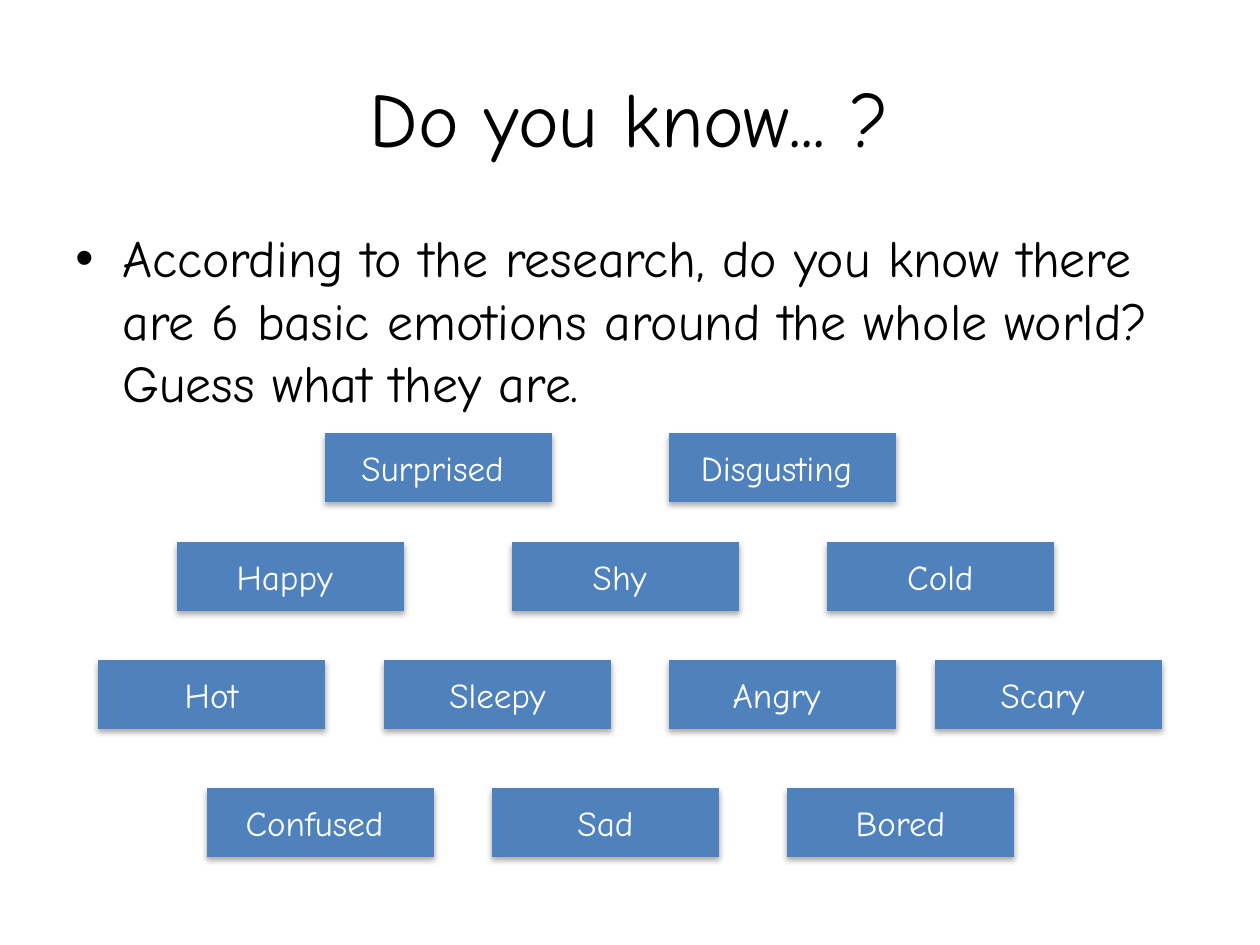
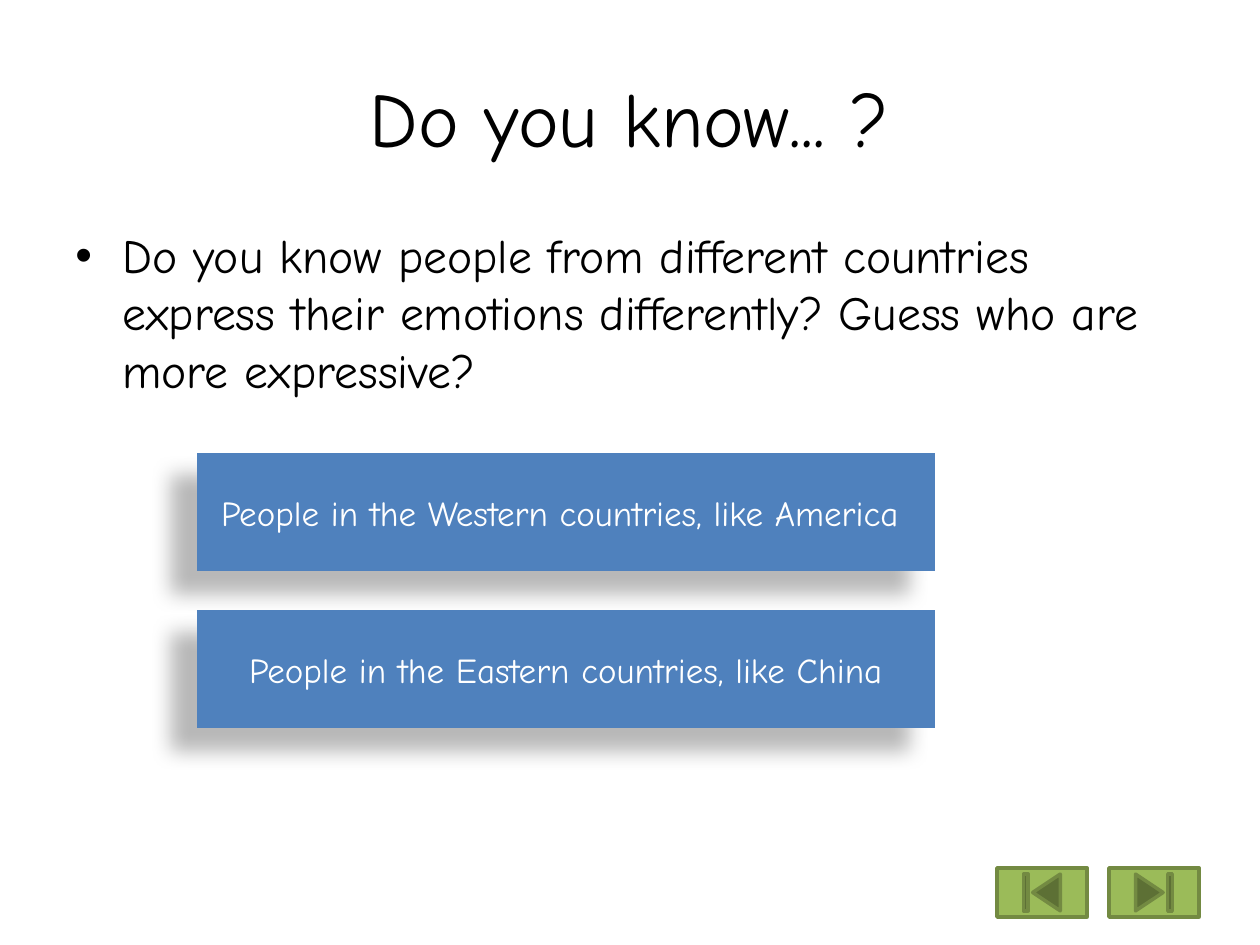
from pptx import Presentation
from pptx import util as u
from pptx.dml.color import RGBColor
from pptx.enum import shapes, text
from pptx.oxml.ns import qn
from lxml import etree

PX_PER_INCH = 126
FONT = "Comic Neue"
COLORS = {
    "ink": "000000",
    "white": "FFFFFF",
    "button": "4F81BD",
    "nav": "9BBB59",
    "nav_line": "738A42",
}
TITLE = "Do you know... ?"
BULLET_INDENT = 47
SOFT_SHADOW = dict(alpha=32, blur=3.5, dist=2.2, angle=90)
LONG_SHADOW = dict(alpha=28, blur=11.8, dist=19.7, angle=141)
EMOTION_SIZE = (227, 69)
EMOTION_ROWS = [
    (433, [(325, "Surprised "), (669, "Disgusting ")]),
    (542, [(177, "Happy "), (512, "Shy "), (827, "Cold")]),
    (660, [(98, "Hot"), (384, "Sleepy"), (669, "Angry "), (935, "Scary ")]),
    (788, [(207, "Confused "), (492, "Sad"), (787, "Bored")]),
]
ANSWERS = [
    "People in the Western countries, like America ",
    "People in the Eastern countries, like China",
]


def px(value):
    return u.Emu(round(value * 914400 / PX_PER_INCH))


def rgb(name):
    return RGBColor.from_string(COLORS[name])


def write(sp, content, size=20, color="white", align="CENTER", anchor="MIDDLE"):
    tf = sp.text_frame
    tf.word_wrap = True
    tf.vertical_anchor = text.MSO_ANCHOR[anchor]
    p = tf.paragraphs[0]
    p.alignment = text.PP_ALIGN[align]
    r = p.add_run()
    r.text = content
    r.font.name = FONT
    r.font.size = u.Pt(size)
    r.font.color.rgb = rgb(color)
    return p


def add_text(s, box, content, **fmt):
    sp = s.shapes.add_textbox(*map(px, box))
    return write(sp, content, **fmt)


def add_bullet(s, box, content, size):
    p = add_text(s, box, content, size=size, color="ink", align="LEFT", anchor="TOP")
    p.space_before = u.Pt(round(size * 0.2))
    pPr = p._p.get_or_add_pPr()
    pPr.set("marL", str(px(BULLET_INDENT)))
    pPr.set("indent", str(px(-BULLET_INDENT)))
    etree.SubElement(pPr, qn("a:buFont"), typeface="Arial")
    etree.SubElement(pPr, qn("a:buChar"), char="•")


def add_shadow(sp, alpha, blur, dist, angle):
    effects = sp._element.spPr.find(qn("a:effectLst"))
    shadow = etree.SubElement(
        effects, qn("a:outerShdw"), blurRad=str(u.Pt(blur)),
        dist=str(u.Pt(dist)), dir=str(angle * 60000), rotWithShape="0")
    color = etree.SubElement(shadow, qn("a:srgbClr"), val=COLORS["ink"])
    etree.SubElement(color, qn("a:alpha"), val=str(alpha * 1000))


def add_button(s, kind, box, fill):
    sp = s.shapes.add_shape(shapes.MSO_SHAPE[kind], *map(px, box))
    sp.shadow.inherit = False
    sp.fill.solid()
    sp.fill.fore_color.rgb = rgb(fill)
    return sp


def add_choice(s, box, label, shadow):
    sp = add_button(s, "ACTION_BUTTON_CUSTOM", box, "button")
    sp.line.fill.background()
    add_shadow(sp, **shadow)
    write(sp, label)


def add_nav(s, kind, left):
    sp = add_button(s, kind, (left, 868, 90, 49), "nav")
    sp.line.color.rgb = rgb("nav_line")
    sp.line.width = u.Pt(2)


def add_question(prs, question, box, size):
    s = prs.slides.add_slide(prs.slide_layouts[6])
    add_text(s, (63, 38, 1134, 158), TITLE, size=44, color="ink")
    add_bullet(s, box, question, size)
    return s


def add_emotions(prs):
    s = add_question(
        prs, "According to the research, do you know there are 6 basic emotions "
        "around the whole world? Guess what they are.", (63, 220, 1134, 173), 29.6)
    for top, row in EMOTION_ROWS:
        for left, label in row:
            add_choice(s, (left, top, *EMOTION_SIZE), label, SOFT_SHADOW)


def add_countries(prs):
    s = add_question(
        prs, "Do you know people from different countries express their emotions "
        "differently? Guess who are more expressive?", (63, 220, 1148, 213), 27.2)
    for i, label in enumerate(ANSWERS):
        add_choice(s, (197, 453 + 157 * i, 738, 118), label, LONG_SHADOW)
    add_nav(s, "ACTION_BUTTON_BEGINNING", 997)
    add_nav(s, "ACTION_BUTTON_END", 1109)


def main():
    prs = Presentation()
    prs.slide_width, prs.slide_height = px(1260), px(945)
    add_emotions(prs)
    add_countries(prs)
    prs.save("out.pptx")


if __name__ == "__main__":
    main()
